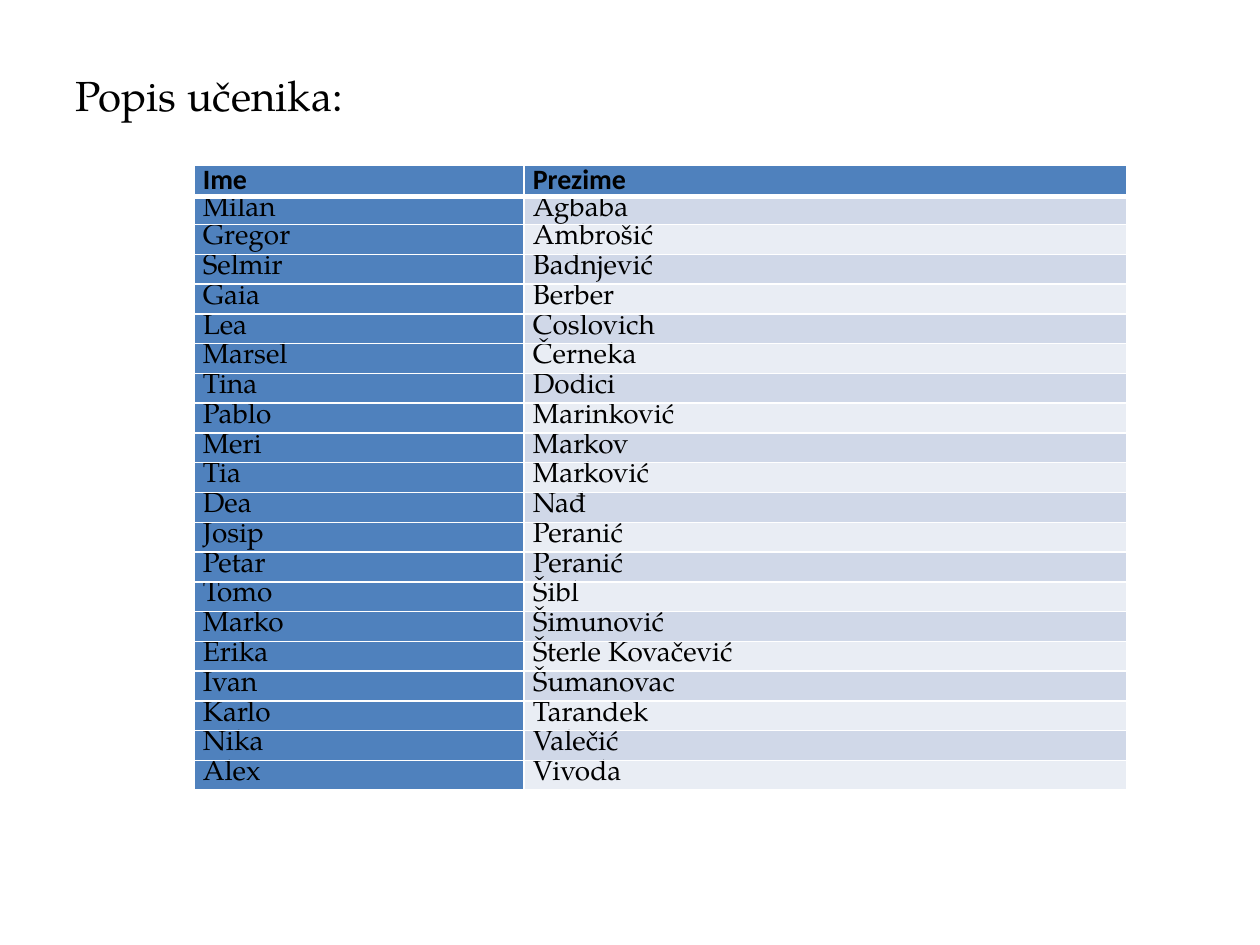
from lxml.etree import SubElement
from pptx import Presentation
from pptx.dml.color import RGBColor
from pptx.enum.text import MSO_ANCHOR, PP_ALIGN
from pptx.oxml.ns import qn
from pptx.util import Inches, Pt

TITLE = "Popis učenika:"
HEAD = ("Ime", "Prezime")
PUPILS = [
    ("Milan", "Agbaba"),
    ("Gregor", "Ambrošić"),
    ("Selmir", "Badnjević"),
    ("Gaia", "Berber"),
    ("Lea", "Coslovich"),
    ("Marsel", "Černeka"),
    ("Tina", "Dodici"),
    ("Pablo", "Marinković"),
    ("Meri", "Markov"),
    ("Tia", "Marković"),
    ("Dea", "Nađ"),
    ("Josip", "Peranić"),
    ("Petar", "Peranić"),
    ("Tomo", "Šibl"),
    ("Marko", "Šimunović"),
    ("Erika", "Šterle Kovačević"),
    ("Ivan", "Šumanovac"),
    ("Karlo", "Tarandek"),
    ("Nika", "Valečić"),
    ("Alex", "Vivoda"),
]
COLORS = {"blue": "4F81BD", "odd": "D0D8E8", "even": "E9EDF4",
          "line": "FFFFFF", "text": "000000"}
SERIF, SANS = "TeX Gyre Pagella", "Calibri"
WIDTHS = (2.62, 4.78)
HEAD_H, FIRST_H, REST_H = 0.25, 0.22, 4.49


def style(par, name, size, bold=False):
    par.alignment = PP_ALIGN.LEFT
    par.font.name = name
    par.font.size = Pt(size)
    par.font.bold = bold
    par.font.color.rgb = RGBColor.from_string(COLORS["text"])


def paint(cell, color, base):
    """Fill a cell and edge it in white; base is the bottom line width."""
    props = cell._tc.get_or_add_tcPr()
    for side, width in (("L", 1), ("R", 1), ("T", 1), ("B", base)):
        line = SubElement(props, qn(f"a:ln{side}"), w=str(Pt(width)))
        fill = SubElement(line, qn("a:solidFill"))
        SubElement(fill, qn("a:srgbClr"), val=COLORS["line"])
    cell.fill.solid()
    cell.fill.fore_color.rgb = RGBColor.from_string(COLORS[color])


def add_title(slide):
    title = slide.shapes.title
    title.left, title.top = Inches(0.5), Inches(0.3)
    title.width, title.height = Inches(9), Inches(1.25)
    frame = title.text_frame
    frame.text = TITLE
    frame.vertical_anchor = MSO_ANCHOR.MIDDLE
    frame.margin_bottom = Inches(0.4)
    style(frame.paragraphs[0], SERIF, 24)


def add_list(slide):
    rows = [HEAD, *PUPILS]
    table = slide.shapes.add_table(
        len(rows), len(HEAD), Inches(1.54), Inches(1.31),
        Inches(sum(WIDTHS)), Inches(HEAD_H + FIRST_H + REST_H)).table
    for col, width in zip(table.columns, WIDTHS):
        col.width = Inches(width)
    rest = REST_H / (len(PUPILS) - 1)
    for r, names in enumerate(rows):
        top = r == 0
        table.rows[r].height = Inches((HEAD_H, FIRST_H)[r] if r < 2 else rest)
        for c, name in enumerate(names):
            cell = table.cell(r, c)
            cell.text = name
            cell.margin_left = cell.margin_right = Inches(0.07)
            cell.margin_top = cell.margin_bottom = 0
            par = cell.text_frame.paragraphs[0]
            style(par, SANS if top else SERIF, 16, top)
            par.line_spacing = Pt(18 if top else 16)
            band = "odd" if r % 2 else "even"
            paint(cell, "blue" if top or c == 0 else band, 3 if top else 1)


def main():
    deck = Presentation()
    deck.slide_width, deck.slide_height = Inches(10), Inches(7.5)
    slide = deck.slides.add_slide(deck.slide_layouts[5])
    add_title(slide)
    add_list(slide)
    deck.save("out.pptx")


if __name__ == "__main__":
    main()
